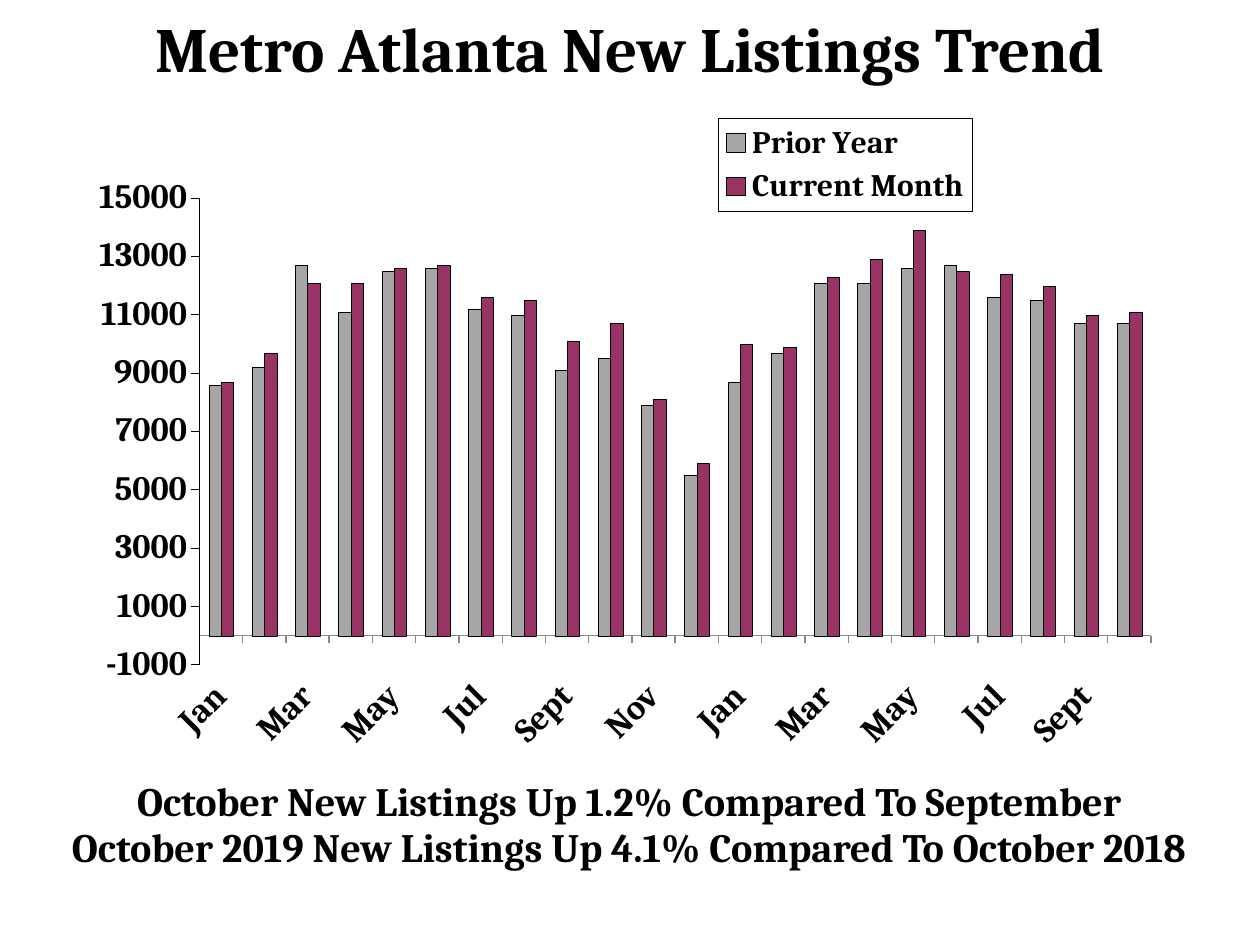
from dataclasses import dataclass

from lxml.etree import SubElement
from pptx import Presentation
from pptx.chart.data import CategoryChartData
from pptx.dml.color import RGBColor
from pptx.enum.chart import XL_CHART_TYPE as ChartType
from pptx.enum.chart import XL_LEGEND_POSITION as LegendPosition
from pptx.enum.chart import XL_TICK_LABEL_POSITION as LabelPosition
from pptx.enum.chart import XL_TICK_MARK as TickMark
from pptx.enum.text import MSO_ANCHOR as Anchor
from pptx.enum.text import MSO_AUTO_SIZE as AutoSize
from pptx.enum.text import PP_ALIGN as Align
from pptx.oxml import parse_xml
from pptx.oxml.ns import nsdecls, qn
from pptx.util import Emu, Pt

PX_PER_INCH = 126
FONT = "Cambria"
BLACK = "000000"
AXIS_GRAY = "878787"


@dataclass
class Area:
    left: int
    top: int
    width: int
    height: int

    def emu(self) -> tuple:
        return tuple(px(n) for n in (self.left, self.top, self.width, self.height))


@dataclass
class Series:
    name: str
    color: str
    values: list[int]


MONTHS = ["Jan", "Feb", "Mar", "Apr", "May", "Jun",
          "Jul", "Aug", "Sept", "Oct", "Nov", "Dec"]
CATEGORIES = MONTHS + MONTHS[:10]
SERIES = [
    Series("Prior Year", "A6A6A6",
           [8600, 9200, 12700, 11100, 12500, 12600, 11200, 11000, 9100, 9500, 7900,
            5500, 8700, 9700, 12100, 12100, 12600, 12700, 11600, 11500, 10700, 10700]),
    Series("Current Month", "993366",
           [8700, 9700, 12100, 12100, 12600, 12700, 11600, 11500, 10100, 10700, 8100,
            5900, 10000, 9900, 12300, 12900, 13900, 12500, 12400, 12000, 11000, 11100]),
]
CAPTIONS = [
    "October New Listings Up 1.2% Compared To September",
    "October 2019 New Listings Up 4.1% Compared To October 2018",
]

TITLE_AREA = Area(0, 21, 1260, 53)
CHART_AREA = Area(78, 105, 1104, 665)
CAPTION_AREA = Area(0, 756, 1260, 126)


def px(count: int) -> Emu:
    return Emu(round(count * 914400 / PX_PER_INCH))


def rgb(value: str) -> RGBColor:
    return RGBColor.from_string(value)


def style_font(font, size: float, color: str = BLACK) -> None:
    font.name = FONT
    font.size = Pt(size)
    font.bold = True
    font.color.rgb = rgb(color)


def style_line(line, color: str, width: float) -> None:
    line.color.rgb = rgb(color)
    line.width = Pt(width)


def write_text(shape, lines: list[str], *, size: float, anchor=Anchor.TOP,
               margin_top: int = 0, line_spacing: float = 1.0,
               gap: float = 0) -> None:
    frame = shape.text_frame
    frame.word_wrap = True
    frame.auto_size = AutoSize.NONE
    frame.vertical_anchor = anchor
    frame.margin_left = frame.margin_right = frame.margin_bottom = 0
    frame.margin_top = px(margin_top)
    for index, text in enumerate(lines):
        para = frame.add_paragraph() if index else frame.paragraphs[0]
        para.alignment = Align.CENTER
        para.line_spacing = line_spacing
        para.space_before = Pt(gap if index else 0)
        span = para.add_run()
        span.text = text
        style_font(span.font, size)


def manual_layout(x: float, y: float, w: float, h: float, inner: bool = False):
    """Return a c:layout element placed in fractions of the chart area."""
    layout = parse_xml(f"<c:layout {nsdecls('c')}><c:manualLayout/></c:layout>")
    settings = [("layoutTarget", "inner")] if inner else []
    settings += [("xMode", "edge"), ("yMode", "edge"),
                 ("x", x), ("y", y), ("w", w), ("h", h)]
    for tag, value in settings:
        SubElement(layout[0], qn(f"c:{tag}")).set("val", str(value))
    return layout


def style_axes(chart) -> None:
    months = chart.category_axis
    months.tick_label_position = LabelPosition.LOW
    months.major_tick_mark = TickMark.OUTSIDE
    months.has_major_gridlines = False
    style_font(months.tick_labels.font, 19.5)
    style_line(months.format.line, AXIS_GRAY, 0.75)
    axis_xml = months._element
    axis_xml.find(qn("c:txPr")).find(qn("a:bodyPr")).set("rot", "-2700000")
    skip = parse_xml(f'<c:tickLblSkip {nsdecls("c")} val="2"/>')
    axis_xml.find(qn("c:noMultiLvlLbl")).addprevious(skip)

    listings = chart.value_axis
    listings.minimum_scale = -1000
    listings.maximum_scale = 15000
    listings.major_unit = 2000
    listings.major_tick_mark = TickMark.OUTSIDE
    listings.has_major_gridlines = False
    listings.tick_labels.number_format = "0"
    listings.tick_labels.number_format_is_linked = False
    style_font(listings.tick_labels.font, 19.5)
    style_line(listings.format.line, BLACK, 0.01)


def style_legend(chart) -> None:
    chart.has_legend = True
    legend = chart.legend
    legend.position = LegendPosition.RIGHT
    legend.include_in_layout = False
    style_font(legend.font, 17.9)
    legend_xml = legend._element
    for old in legend_xml.findall(qn("c:layout")):
        legend_xml.remove(old)
    legend_xml.find(qn("c:overlay")).addprevious(
        manual_layout(0.58, 0.02, 0.23, 0.14))
    border = parse_xml(
        f'<c:spPr {nsdecls("c", "a")}><a:solidFill><a:srgbClr val="FFFFFF"/></a:solidFill>'
        f'<a:ln w="3175"><a:solidFill><a:srgbClr val="{BLACK}"/></a:solidFill></a:ln></c:spPr>')
    legend_xml.find(qn("c:txPr")).addprevious(border)


def add_listings_chart(page) -> None:
    data = CategoryChartData(number_format="0")
    data.categories = CATEGORIES
    for series in SERIES:
        data.add_series(series.name, series.values)
    chart = page.shapes.add_chart(
        ChartType.COLUMN_CLUSTERED, *CHART_AREA.emu(), data).chart
    chart.has_title = False
    style_font(chart.font, 19.5)

    plot = chart.plots[0]
    plot.gap_width = 150
    plot.overlap = 0
    plot.vary_by_categories = False
    for bars, series in zip(plot.series, SERIES):
        bars.invert_if_negative = False
        bars.format.fill.solid()
        bars.format.fill.fore_color.rgb = rgb(series.color)
        style_line(bars.format.line, BLACK, 0.03)

    style_axes(chart)
    style_legend(chart)
    plot_area = chart._chartSpace.chart.plotArea
    for old in plot_area.findall(qn("c:layout")):
        plot_area.remove(old)
    plot_area.insert(0, manual_layout(0.11, 0.14, 0.862, 0.702, inner=True))


def main() -> None:
    deck = Presentation()
    deck.slide_width, deck.slide_height = px(1260), px(945)
    page = deck.slides.add_slide(deck.slide_layouts[5])

    title = page.shapes.title
    title.left, title.top, title.width, title.height = TITLE_AREA.emu()
    write_text(title, ["Metro Atlanta New Listings Trend"], size=36,
               anchor=Anchor.MIDDLE)

    add_listings_chart(page)

    caption = page.shapes.add_textbox(*CAPTION_AREA.emu())
    write_text(caption, CAPTIONS, size=23, margin_top=26, line_spacing=0.9, gap=1.5)

    deck.save("out.pptx")


if __name__ == "__main__":
    main()
